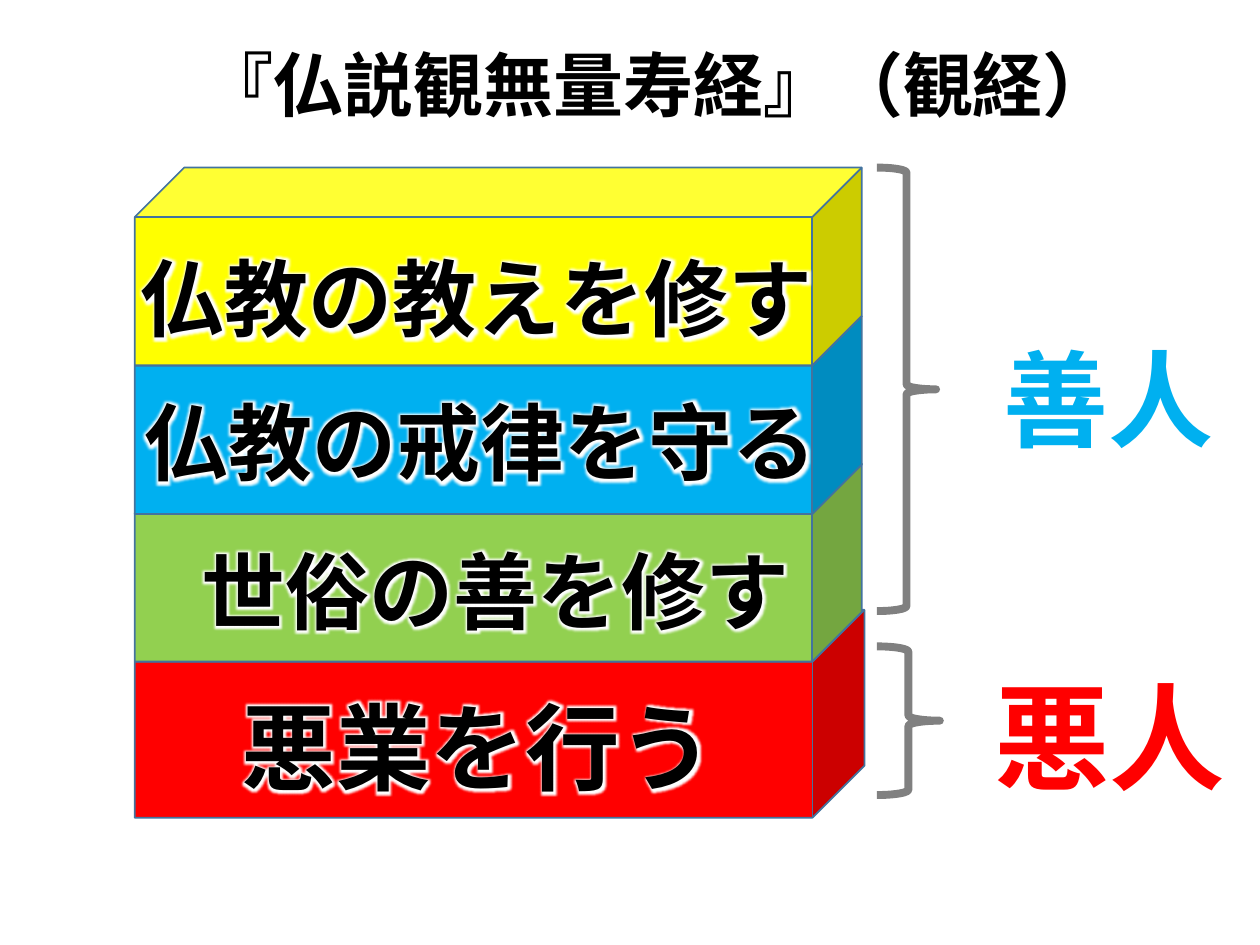
"""Builds a slide that ranks deeds as stacked blocks, split into good and evil people."""
from lxml import etree
from pptx import Presentation
from pptx import util as u
from pptx.dml.color import RGBColor
from pptx.enum import shapes, text
from pptx.oxml import ns

FONT = "Noto Sans CJK JP"
BLACK = RGBColor(0x00, 0x00, 0x00)
RED = RGBColor(0xFF, 0x00, 0x00)
GREEN = RGBColor(0x92, 0xD0, 0x50)
BLUE = RGBColor(0x00, 0xB0, 0xF0)
YELLOW = RGBColor(0xFF, 0xFF, 0x00)
EDGE = RGBColor(0x43, 0x73, 0x9E)
GRAY = RGBColor(0x80, 0x80, 0x80)

BLOCKS = [
    (4.84, 5.79, 1.65, RED),
    (3.68, 5.77, 1.57, GREEN),
    (2.51, 5.77, 1.57, BLUE),
    (1.33, 5.77, 1.57, YELLOW),
]
BLOCK_LABELS = [
    ("悪業を行う", 1.82, 5.52, 4.03, 54),
    ("世俗の善を修す", 1.5, 4.28, 4.89, 48),
    ("仏教の戒律を守る", 1.05, 3.1, 5.79, 48),
    ("仏教の教えを修す", 1.02, 1.96, 5.63, 48),
]


class SlideBuilder:
    def __init__(self, presentation):
        self.slide = presentation.slides.add_slide(presentation.slide_layouts[5])

    def set_text(self, shape, words, size, color, align, anchor=text.MSO_ANCHOR.MIDDLE):
        frame = shape.text_frame
        frame.word_wrap = True
        frame.auto_size = text.MSO_AUTO_SIZE.NONE
        frame.vertical_anchor = anchor
        paragraph = frame.paragraphs[0]
        paragraph.alignment = align
        run = paragraph.add_run()
        run.text = words
        font = paragraph.font
        font.size = u.Pt(size)
        font.bold = True
        font.color.rgb = color
        font.name = FONT
        etree.SubElement(font._element, ns.qn("a:ea"), typeface=FONT)
        return run

    def title(self, words, left, top, width, height):
        shape = self.slide.shapes.title
        shape.left, shape.top = u.Inches(left), u.Inches(top)
        shape.width, shape.height = u.Inches(width), u.Inches(height)
        self.set_text(shape, words, 40, BLACK, text.PP_ALIGN.CENTER, text.MSO_ANCHOR.TOP)

    def shape(self, kind, left, top, width, height, line, weight, fill=None):
        shape = self.slide.shapes.add_shape(
            kind, u.Inches(left), u.Inches(top), u.Inches(width), u.Inches(height))
        shape.shadow.inherit = False
        if fill is None:
            shape.fill.background()
        else:
            shape.fill.solid()
            shape.fill.fore_color.rgb = fill
        if line is None:
            shape.line.fill.background()
        else:
            shape.line.color.rgb = line
            shape.line.width = u.Pt(weight)
        return shape

    def block(self, top, width, height, fill):
        self.shape(shapes.MSO_SHAPE.CUBE, 1.07, top, width, height, EDGE, 1, fill)

    def brace(self, top, width, height):
        self.shape(shapes.MSO_SHAPE.RIGHT_BRACE, 6.96, top, width, height, GRAY, 4.5)

    def label(self, words, left, top, width, height, size, color, align):
        box = self.slide.shapes.add_textbox(
            u.Inches(left), u.Inches(top), u.Inches(width), u.Inches(height))
        return self.set_text(box, words, size, color, align)

    def glowing_label(self, words, left, top, width, size):
        run = self.label(words, left, top, width, 0.8, size, BLACK, text.PP_ALIGN.LEFT)
        effects = etree.SubElement(run._r.get_or_add_rPr(), ns.qn("a:effectLst"))
        glow = etree.SubElement(effects, ns.qn("a:glow"), rad=str(u.Pt(5)))
        etree.SubElement(glow, ns.qn("a:srgbClr"), val="FFFFFF")

    def rounded_label(self, words, left, top, width, height, size, color):
        shape = self.shape(
            shapes.MSO_SHAPE.ROUNDED_RECTANGLE, left, top, width, height, None, 0)
        self.set_text(shape, words, size, color, text.PP_ALIGN.CENTER)


def main():
    presentation = Presentation()
    presentation.slide_width = u.Inches(10)
    presentation.slide_height = u.Inches(7.5)
    builder = SlideBuilder(presentation)
    builder.title("『仏説観無量寿経』（観経）", 1.3, 0.28, 7.85, 0.77)
    for block in BLOCKS:
        builder.block(*block)
    builder.brace(1.33, 0.47, 3.52)
    builder.brace(5.13, 0.5, 1.18)
    builder.rounded_label("善人", 7.78, 2.63, 2.04, 1.05, 60, BLUE)
    builder.label("悪人", 7.76, 5.12, 2.1, 1.44, 66, RED, text.PP_ALIGN.CENTER)
    for label in BLOCK_LABELS:
        builder.glowing_label(*label)
    presentation.save("out.pptx")


if __name__ == "__main__":
    main()
